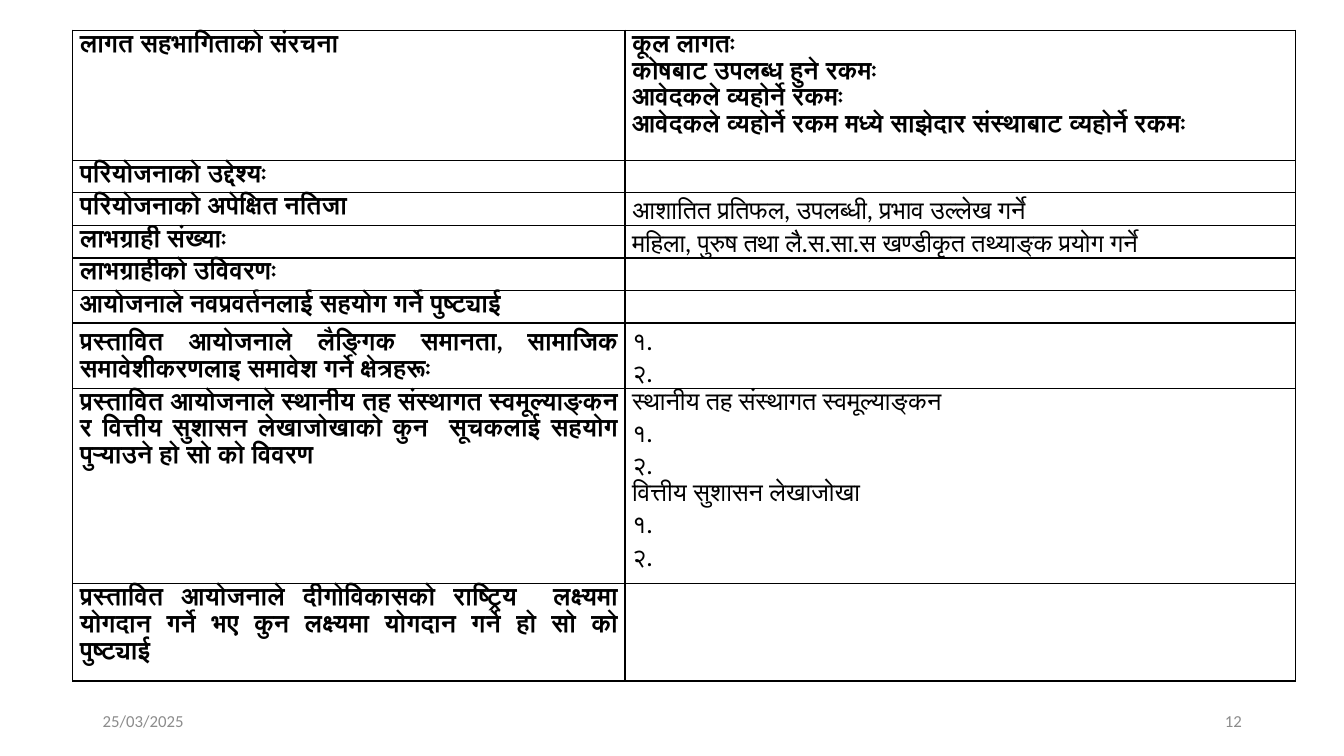
from dataclasses import dataclass

from lxml.etree import SubElement
from pptx import Presentation
from pptx.dml.color import RGBColor
from pptx.enum.text import MSO_ANCHOR, PP_ALIGN
from pptx.oxml.ns import qn
from pptx.slide import Slide
from pptx.table import _Cell
from pptx.text.text import Font, _Paragraph
from pptx.util import Cm, Pt

BLACK = "000000"
GREY = "8C8C8C"
LINE_HEIGHT = 0.82
COLUMN_WIDTHS = (13.92, 16.89)


@dataclass
class FormRow:
    label: str
    answers: tuple[str, ...] = ()
    lines: int = 1
    bold_answers: bool = False


@dataclass
class FooterField:
    text: str
    left: float
    alignment: PP_ALIGN


FORM_ROWS = [
    FormRow(
        "लागत सहभागिताको संरचना",
        (
            "कूल लागतः",
            "कोषबाट उपलब्ध हुने रकमः",
            "आवेदकले व्यहोर्ने रकमः",
            "आवेदकले व्यहोर्ने रकम मध्ये साझेदार संस्थाबाट व्यहोर्ने रकमः",
        ),
        lines=4,
        bold_answers=True,
    ),
    FormRow("परियोजनाको उद्देश्यः"),
    FormRow("परियोजनाको अपेक्षित नतिजा", ("आशातित प्रतिफल, उपलब्धी, प्रभाव उल्लेख गर्ने",)),
    FormRow("लाभग्राही संख्याः", ("महिला, पुरुष तथा लै.स.सा.स खण्डीकृत तथ्याङ्क प्रयोग गर्ने",)),
    FormRow("लाभग्राहीको उविवरणः"),
    FormRow("आयोजनाले नवप्रवर्तनलाई सहयोग गर्ने पुष्ट्याई"),
    FormRow(
        "प्रस्तावित आयोजनाले लैङ्गिक समानता, सामाजिक समावेशीकरणलाइ समावेश गर्ने क्षेत्रहरूः",
        ("१.", "२."),
        lines=2,
    ),
    FormRow(
        "प्रस्तावित आयोजनाले स्थानीय तह संस्थागत स्वमूल्याङ्कन र वित्तीय सुशासन "
        "लेखाजोखाको कुन  सूचकलाई सहयोग पुऱ्याउने हो सो को विवरण",
        ("स्थानीय तह संस्थागत स्वमूल्याङ्कन", "१.", "२.", "वित्तीय सुशासन लेखाजोखा", "१.", "२."),
        lines=6,
    ),
    FormRow(
        "प्रस्तावित आयोजनाले दीगोविकासको राष्ट्रिय  लक्ष्यमा योगदान गर्ने भए "
        "कुन लक्ष्यमा योगदान गर्ने हो सो को पुष्ट्याई",
        lines=3,
    ),
]

FOOTER_FIELDS = [
    FooterField("25/03/2025", 2.34, PP_ALIGN.LEFT),
    FooterField("12", 23.93, PP_ALIGN.RIGHT),
]


def color(value: str) -> RGBColor:
    return RGBColor.from_string(value)


def set_attributes(target: object, values: dict) -> None:
    for name, value in values.items():
        setattr(target, name, value)


def format_font(font: Font, name: str, size: float, value: str, bold: bool = False) -> None:
    set_attributes(font, {"name": name, "size": Pt(size), "bold": bold})
    font.color.rgb = color(value)


def format_answer(paragraph: _Paragraph, text: str, bold: bool) -> None:
    paragraph.text = text
    set_attributes(paragraph, {"alignment": PP_ALIGN.JUSTIFY, "line_spacing": 1.07})
    format_font(paragraph.font, "Lato", 18, BLACK, bold)
    for run in paragraph.runs:
        format_font(run.font, "Lato", 18, BLACK, bold)


def add_borders(cell: _Cell) -> None:
    properties = cell._tc.get_or_add_tcPr()
    for position, side in enumerate(("lnL", "lnR", "lnT", "lnB")):
        line = properties.makeelement(qn(f"a:{side}"), {"w": str(Pt(1))})
        fill = SubElement(line, qn("a:solidFill"))
        SubElement(fill, qn("a:srgbClr"), {"val": BLACK})
        properties.insert(position, line)


def fill_cell(cell: _Cell, texts: tuple[str, ...], bold: bool) -> None:
    set_attributes(cell, {
        "margin_left": Cm(0.18),
        "margin_right": Cm(0.18),
        "margin_top": 0,
        "margin_bottom": 0,
        "vertical_anchor": MSO_ANCHOR.TOP,
    })
    cell.fill.background()
    add_borders(cell)
    frame = cell.text_frame
    for index, text in enumerate(texts or ("",)):
        paragraph = frame.add_paragraph() if index else frame.paragraphs[0]
        format_answer(paragraph, text, bold)


def add_form(slide: Slide, rows: list[FormRow]) -> None:
    height = LINE_HEIGHT * sum(row.lines for row in rows)
    shape = slide.shapes.add_table(
        len(rows), len(COLUMN_WIDTHS), Cm(1.83), Cm(0.76), Cm(sum(COLUMN_WIDTHS)), Cm(height)
    )
    table = shape.table
    set_attributes(table, {"first_row": False, "horz_banding": False})
    for column, width in zip(table.columns, COLUMN_WIDTHS):
        column.width = Cm(width)
    for index, row in enumerate(rows):
        table.rows[index].height = Cm(LINE_HEIGHT * row.lines)
        fill_cell(table.cell(index, 0), (row.label,), True)
        fill_cell(table.cell(index, 1), row.answers, row.bold_answers)


def add_footer(slide: Slide, field: FooterField) -> None:
    box = slide.shapes.add_textbox(Cm(field.left), Cm(17.65), Cm(7.62), Cm(1.02))
    frame = box.text_frame
    set_attributes(frame, {"word_wrap": True, "vertical_anchor": MSO_ANCHOR.MIDDLE})
    paragraph = frame.paragraphs[0]
    set_attributes(paragraph, {"text": field.text, "alignment": field.alignment})
    format_font(paragraph.runs[0].font, "Calibri", 12, GREY)


def main() -> None:
    presentation = Presentation()
    set_attributes(presentation, {"slide_width": Cm(33.87), "slide_height": Cm(19.05)})
    slide = presentation.slides.add_slide(presentation.slide_layouts[6])

    # Application form
    add_form(slide, FORM_ROWS)

    # Date and slide number
    for field in FOOTER_FIELDS:
        add_footer(slide, field)

    presentation.save("out.pptx")


if __name__ == "__main__":
    main()
